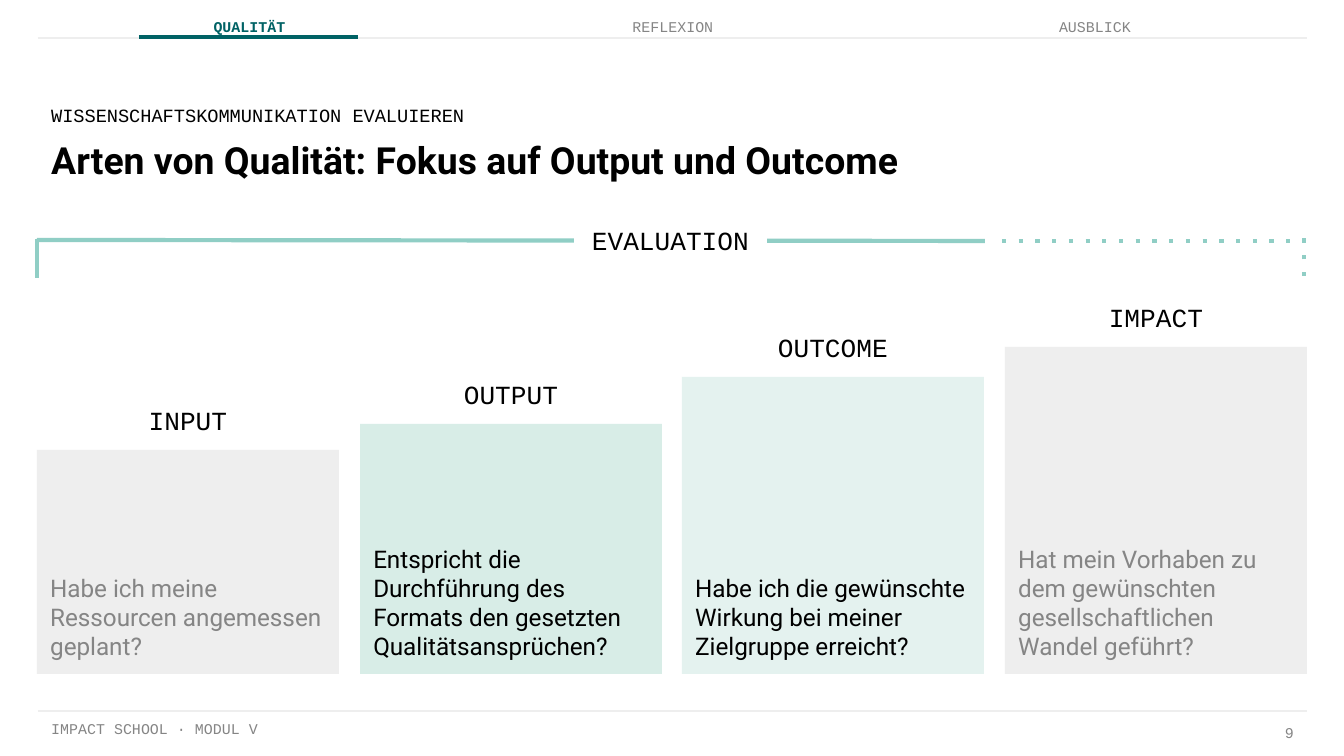
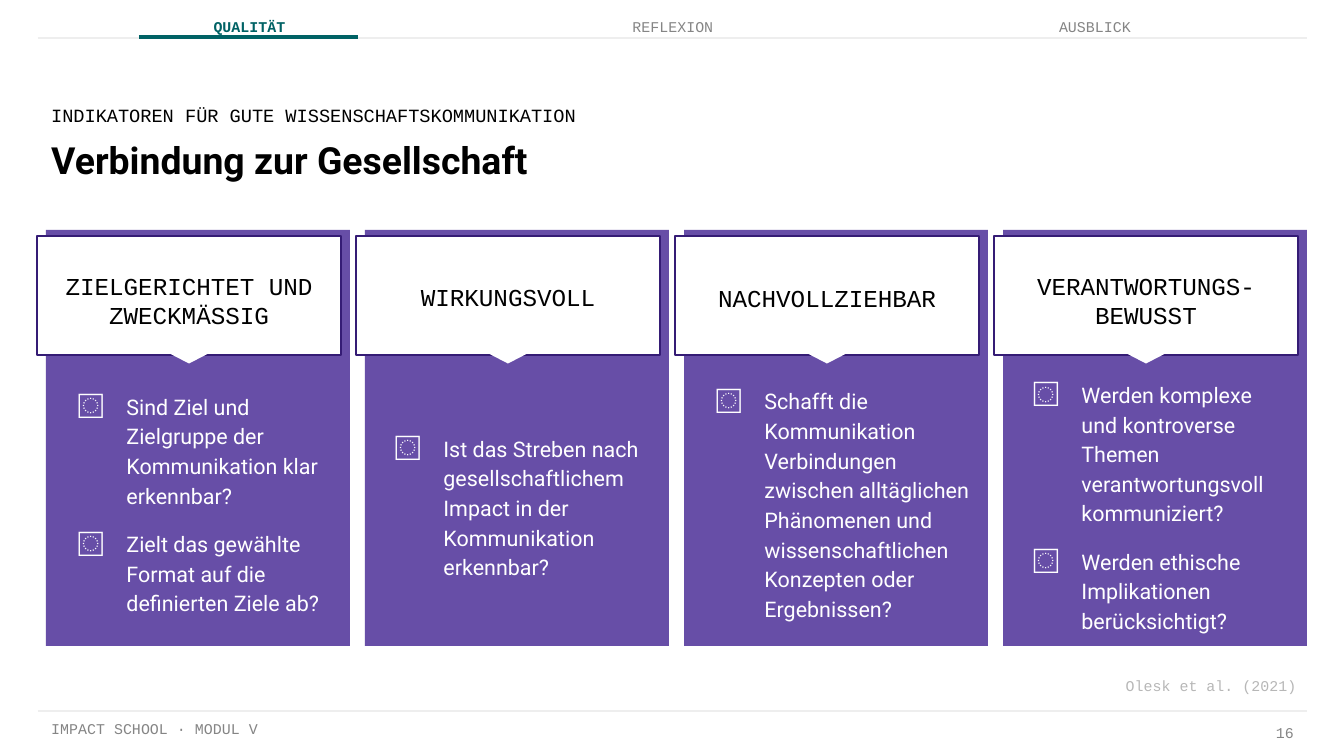
from copy import deepcopy
from dataclasses import dataclass

from lxml.etree import SubElement
from pptx import Presentation
from pptx.dml.color import RGBColor
from pptx.enum.shapes import MSO_CONNECTOR, MSO_SHAPE
from pptx.enum.text import MSO_ANCHOR, PP_ALIGN
from pptx.oxml.ns import qn
from pptx.util import Inches, Pt

PX = Inches(10) / 1344
MONO, SANS = "Courier New", "Roboto"
BLACK, WHITE, GREY, PALE_GREY = "000000", "FFFFFF", "858585", "EEEEEE"
TEAL, MINT, PALE_MINT = "006265", "90CEC5", "CBE7E0"
PURPLE, DARK_PURPLE, CITE_GREY = "674EA7", "351C75", "B7B7B7"
LEFT, RIGHT = 38, 1307
LEFT_ALIGN, CENTER, RIGHT_ALIGN = PP_ALIGN.LEFT, PP_ALIGN.CENTER, PP_ALIGN.RIGHT
TOP, MIDDLE, BOTTOM = MSO_ANCHOR.TOP, MSO_ANCHOR.MIDDLE, MSO_ANCHOR.BOTTOM
CHECKBOX = "⃞"


@dataclass(frozen=True)
class Tab:
    label: str
    left: int
    width: int
    active: bool = False


@dataclass(frozen=True)
class Stage:
    label: str
    question: str
    top: int
    fill: str
    opacity: int
    color: str


@dataclass(frozen=True)
class Indicator:
    heading: str
    heading_top: int
    questions: tuple[str, ...]
    body_dx: int = 0
    body_dy: int = 0


TABS = (
    Tab("QUALITÄT", 132, 235, active=True),
    Tab("REFLEXION", 444, 458),
    Tab("AUSBLICK", 903, 384),
)

STAGES = (
    Stage("INPUT", "Habe ich meine Ressourcen angemessen geplant?",
          450, PALE_GREY, 100, GREY),
    Stage("OUTPUT", "Entspricht die Durchführung des Formats den gesetzten "
          "Qualitätsansprüchen?", 424, PALE_MINT, 75, BLACK),
    Stage("OUTCOME", "Habe ich die gewünschte Wirkung bei meiner Zielgruppe "
          "erreicht?", 377, PALE_MINT, 50, BLACK),
    Stage("IMPACT", "Hat mein Vorhaben zu dem gewünschten gesellschaftlichen "
          "Wandel geführt?", 347, PALE_GREY, 100, GREY),
)

INDICATORS = (
    Indicator("ZIELGERICHTET UND ZWECKMÄSSIG", 269, (
        "Sind Ziel und Zielgruppe der Kommunikation klar erkennbar?",
        "Zielt das gewählte Format auf die definierten Ziele ab?")),
    Indicator("WIRKUNGSVOLL", 265, (
        "Ist das Streben nach gesellschaftlichem Impact in der "
        "Kommunikation erkennbar?",), -2, 3),
    Indicator("NACHVOLLZIEHBAR", 266, (
        "Schafft die Kommunikation Verbindungen zwischen alltäglichen "
        "Phänomenen und wissenschaftlichen Konzepten oder Ergebnissen?",)),
    Indicator("VERANTWORTUNGS-\nBEWUSST", 269, (
        "Werden komplexe und kontroverse Themen verantwortungsvoll "
        "kommuniziert?",
        "Werden ethische Implikationen berücksichtigt?"), -2, 3),
)


def px(*lengths: float) -> list[int]:
    return [round(length * PX) for length in lengths]


def rgb(color: str) -> RGBColor:
    return RGBColor.from_string(color)


def add_checkbox(paragraph, color: str) -> None:
    """Give the paragraph a hanging checkbox bullet."""
    properties = paragraph._p.get_or_add_pPr()
    properties.set("marL", str(Inches(0.5)))
    properties.set("indent", str(-Inches(0.33)))
    bullet_color = SubElement(properties, qn("a:buClr"))
    SubElement(bullet_color, qn("a:srgbClr"), val=color)
    SubElement(properties, qn("a:buFont"), typeface=SANS)
    SubElement(properties, qn("a:buChar"), char=CHECKBOX)


def write(shape, *paragraphs: str, font: str = MONO, size: float = 8,
          color: str = BLACK, bold: bool = False, align=LEFT_ALIGN,
          anchor=MIDDLE, spacing: float | None = None, gap: float = 0,
          checkbox: bool = False) -> None:
    frame = shape.text_frame
    frame.word_wrap = True
    frame.vertical_anchor = anchor
    frame.margin_left = frame.margin_right = Inches(0.1)
    frame.margin_top = frame.margin_bottom = Inches(0.1)
    for index, text in enumerate(paragraphs):
        paragraph = frame.add_paragraph() if index else frame.paragraphs[0]
        paragraph.text = text
        if checkbox:
            add_checkbox(paragraph, color)
        paragraph.alignment = align
        if spacing:
            paragraph.line_spacing = spacing
        if index and gap:
            paragraph.space_before = Pt(gap)
        for run in paragraph.runs:
            run.font.name = font
            run.font.size = Pt(size)
            run.font.bold = bold
            run.font.color.rgb = rgb(color)
        for line_break in paragraph._p.findall(qn("a:br")):
            line_break.append(deepcopy(paragraph.runs[0]._r.rPr))


def add_text(slide, left: float, top: float, width: float, height: float,
             *paragraphs: str, **text_format) -> None:
    box = slide.shapes.add_textbox(*px(left, top, width, height))
    write(box, *paragraphs, **text_format)


def add_block(slide, left: float, top: float, width: float, height: float,
              fill: str, opacity: int = 100, outline: str | None = None,
              kind=MSO_SHAPE.RECTANGLE):
    block = slide.shapes.add_shape(kind, *px(left, top, width, height))
    block.shadow.inherit = False
    block.fill.solid()
    block.fill.fore_color.rgb = rgb(fill)
    if opacity < 100:
        fill_color = block._element.spPr.find(f".//{qn('a:srgbClr')}")
        SubElement(fill_color, qn("a:alpha"), val=str(opacity * 1000))
    if outline:
        block.line.color.rgb = rgb(outline)
        block.line.width = Pt(1.5)
    else:
        block.line.fill.background()
    return block


def add_line(slide, x1: int, y1: int, x2: int, y2: int, color: str,
             width: float = 2.25, dotted: bool = False) -> None:
    line = slide.shapes.add_connector(
        MSO_CONNECTOR.STRAIGHT, *px(x1, y1, x2, y2))
    line.line.color.rgb = rgb(color)
    line.line.width = Pt(width)
    properties = line._element.spPr
    if dotted:
        SubElement(properties.find(qn("a:ln")), qn("a:prstDash"), val="dot")
    SubElement(properties, qn("a:effectLst"))


def add_content_slide(deck, topic: str, title: str, number: int):
    """Add a slide with navigation, headings and footer."""
    slide = deck.slides.add_slide(deck.slide_layouts[6])
    add_text(slide, LEFT, 711, 847, 46, "IMPACT SCHOOL · MODUL V",
             color=GREY, anchor=TOP)
    add_text(slide, 1249, 711, 58, 46, str(number), color=GREY,
             align=RIGHT_ALIGN, spacing=0.8)
    for y in (711, 38):
        add_line(slide, LEFT, y, RIGHT, y, PALE_GREY, 0.75)
    for tab in TABS:
        add_text(slide, tab.left, 3, tab.width, 46, tab.label, align=CENTER,
                 color=TEAL if tab.active else GREY, bold=tab.active)
        if tab.active:
            add_line(slide, tab.left + 7, 37, tab.left + tab.width - 9, 37,
                     TEAL)
    add_text(slide, LEFT, 124, 1044, 70, title, font=SANS, size=20,
             bold=True, anchor=TOP)
    add_text(slide, LEFT, 102, 1044, 27, topic, size=10)
    return slide


def add_stage(slide, stage: Stage, left: int, width: int) -> None:
    base = 674
    bar = add_block(slide, left, stage.top, width, base - stage.top,
                    stage.fill, stage.opacity)
    write(bar, stage.question, font=SANS, size=13, color=stage.color,
          anchor=BOTTOM)
    add_text(slide, left, stage.top - 49, width, 38, stage.label, size=14,
             align=CENTER)


def add_evaluation_bracket(slide) -> None:
    add_line(slide, 37, 240, 985, 241, MINT)
    add_line(slide, 1002, 241, 1297, 241, MINT, dotted=True)
    add_line(slide, 37, 278, 37, 239, MINT)
    add_line(slide, 1304, 276, 1304, 235, MINT, dotted=True)
    label = add_block(slide, 574, 211, 193, 50, WHITE)
    write(label, "EVALUATION", size=14, align=CENTER, anchor=TOP)


def add_indicator(slide, indicator: Indicator, left: int, width: int) -> None:
    card_left = left + 9
    add_block(slide, card_left, 230, width, 416, PURPLE)
    add_block(slide, left, 236, width, 119, WHITE, outline=DARK_PURPLE)
    notch_width, notch_height = 19, 42
    notch = add_block(slide, left + (width - notch_width) / 2,
                      354 - notch_height / 2, notch_width, notch_height,
                      WHITE, kind=MSO_SHAPE.RIGHT_ARROW)
    notch.adjustments[0], notch.adjustments[1] = 0.34, 0.57
    notch.rotation = 90
    add_text(slide, left, indicator.heading_top, width, 63,
             indicator.heading, size=13, align=CENTER)
    add_text(slide, card_left + indicator.body_dx, 368 + indicator.body_dy,
             width, 270, *indicator.questions, font=SANS, size=11.5,
             color=WHITE, spacing=1.15, gap=10, checkbox=True)


def build_quality_slide(deck) -> None:
    slide = add_content_slide(
        deck, "WISSENSCHAFTSKOMMUNIKATION EVALUIEREN",
        "Arten von Qualität: Fokus auf Output und Outcome", 9)
    first, width = 37, 302
    pitch = (RIGHT - width - first) / (len(STAGES) - 1)
    for index, stage in enumerate(STAGES):
        add_stage(slide, stage, round(first + index * pitch), width)
    add_evaluation_bracket(slide)


def build_society_slide(deck) -> None:
    slide = add_content_slide(
        deck, "INDIKATOREN FÜR GUTE WISSENSCHAFTSKOMMUNIKATION",
        "Verbindung zur Gesellschaft", 16)
    for index, indicator in enumerate(INDICATORS):
        add_indicator(slide, indicator, 37 + index * 319, 304)
    add_text(slide, 40, 668, 1270, 63, "Olesk et al. (2021)",
             color=CITE_GREY, align=RIGHT_ALIGN, anchor=TOP)


def main() -> None:
    deck = Presentation()
    deck.slide_width, deck.slide_height = px(1344, 756)
    build_quality_slide(deck)
    build_society_slide(deck)
    deck.save("out.pptx")


if __name__ == "__main__":
    main()
